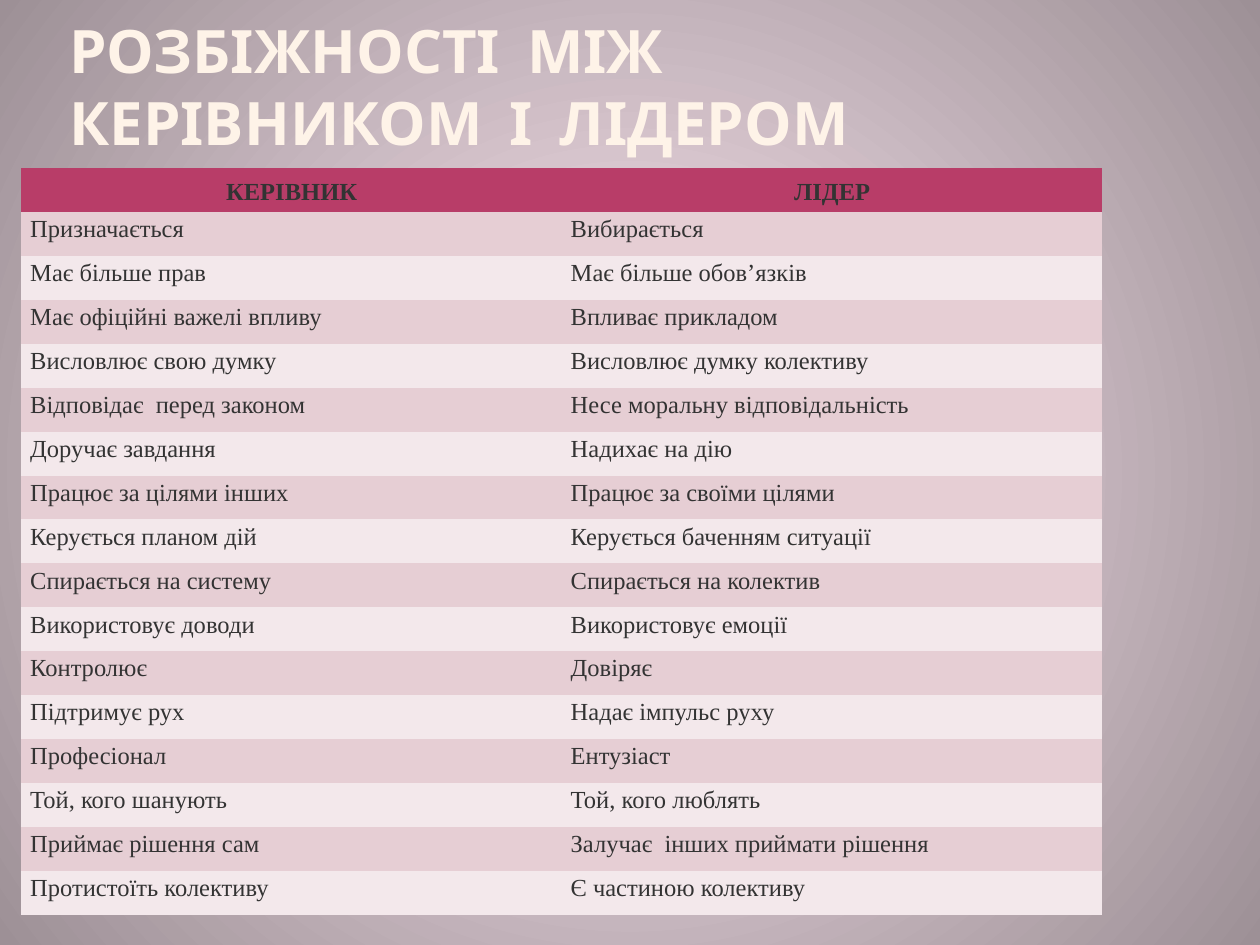
from typing import NamedTuple

from lxml.etree import SubElement
from pptx import Presentation
from pptx.dml.color import RGBColor
from pptx.enum.text import MSO_ANCHOR as Anchor, PP_ALIGN as Align
from pptx.oxml.ns import qn
from pptx.util import Inches, Pt

WIDTH, HEIGHT = Inches(10), Inches(7.5)
COLORS = {
    "glow": "FCE7F1",
    "edge": "9D9096",
    "title": "FEF3E8",
    "text": "333333",
    "header": "B83D68",
    "odd": "E6CED4",
    "even": "F3E8EB",
}
PLAIN_TABLE_STYLE = "{2D5ABB26-0587-4C30-8999-92F81FD0307C}"


class Area(NamedTuple):
    left: float
    top: float
    width: float
    height: float

    def lengths(self) -> tuple[int, ...]:
        return tuple(round(share * side) for share, side in zip(self, (WIDTH, HEIGHT) * 2))


class Contrast(NamedTuple):
    manager: str
    leader: str


TITLE = "РОЗБІЖНОСТІ  МІЖ КЕРІВНИКОМ  І  ЛІДЕРОМ"
TITLE_AREA = Area(0.05, 0, 0.792, 1 / 6)
TABLE_AREA = Area(0.017, 0.178, 0.858, 0.79)
CONTRASTS = [
    Contrast("КЕРІВНИК", "ЛІДЕР"),
    Contrast("Призначається", "Вибирається"),
    Contrast("Має більше прав", "Має більше обов’язків"),
    Contrast("Має офіційні важелі впливу", "Впливає прикладом"),
    Contrast("Висловлює свою думку", "Висловлює думку колективу"),
    Contrast("Відповідає  перед законом", "Несе моральну відповідальність"),
    Contrast("Доручає завдання", "Надихає на дію"),
    Contrast("Працює за цілями інших", "Працює за своїми цілями"),
    Contrast("Керується планом дій", "Керується баченням ситуації"),
    Contrast("Спирається на систему", "Спирається на колектив"),
    Contrast("Використовує доводи", "Використовує емоції"),
    Contrast("Контролює", "Довіряє"),
    Contrast("Підтримує рух", "Надає імпульс руху"),
    Contrast("Професіонал", "Ентузіаст"),
    Contrast("Той, кого шанують", "Той, кого люблять"),
    Contrast("Приймає рішення сам", "Залучає  інших приймати рішення"),
    Contrast("Протистоїть колективу", "Є частиною колективу"),
]


def rgb(name: str) -> RGBColor:
    return RGBColor.from_string(COLORS[name])


def write(frame, text: str, *, font: str, size: float, color: str, bold: bool = False,
          align: Align = Align.LEFT, spacing: float = 1.0) -> None:
    paragraph = frame.paragraphs[0]
    paragraph.alignment = align
    paragraph.line_spacing = spacing
    run = paragraph.add_run()
    run.text = text
    run.font.name = font
    run.font.size = Pt(size)
    run.font.bold = bold
    run.font.color.rgb = rgb(color)


def set_margins(holder, side: float) -> None:
    holder.margin_left = holder.margin_right = Inches(side)
    holder.margin_top = holder.margin_bottom = 0


def paint_background(slide) -> None:
    fill = slide.background.fill
    fill.gradient()
    for stop, name in zip(fill.gradient_stops, ("glow", "edge")):
        stop.color.rgb = rgb(name)
    gradient = slide.element.find(".//" + qn("a:gradFill"))
    gradient.remove(gradient.find(qn("a:lin")))
    circle = SubElement(gradient, qn("a:path"), path="circle")
    SubElement(circle, qn("a:fillToRect"), l="50000", t="50000", r="50000", b="50000")


def add_title(slide) -> None:
    frame = slide.shapes.add_textbox(*TITLE_AREA.lengths()).text_frame
    frame.word_wrap = True
    frame.vertical_anchor = Anchor.BOTTOM
    set_margins(frame, 0.05)
    write(frame, TITLE, font="Cabin", size=34.2, color="title", bold=True)


def add_contrasts(slide) -> None:
    table = slide.shapes.add_table(len(CONTRASTS), 2, *TABLE_AREA.lengths()).table
    table.horz_banding = False
    table.first_row = True
    slide.element.find(".//" + qn("a:tableStyleId")).text = PLAIN_TABLE_STYLE
    for row, contrast in enumerate(CONTRASTS):
        header = row == 0
        band = "header" if header else "odd" if row % 2 else "even"
        for column, text in enumerate(contrast):
            cell = table.cell(row, column)
            cell.fill.solid()
            cell.fill.fore_color.rgb = rgb(band)
            cell.vertical_anchor = Anchor.MIDDLE if header else Anchor.TOP
            set_margins(cell, 0.07)
            write(cell.text_frame, text, font="Times New Roman", size=14, color="text",
                  bold=header, align=Align.CENTER if header else Align.LEFT, spacing=1.15)


def main() -> None:
    deck = Presentation()
    deck.slide_width, deck.slide_height = WIDTH, HEIGHT
    slide = deck.slides.add_slide(deck.slide_layouts[6])
    paint_background(slide)
    add_title(slide)
    add_contrasts(slide)
    deck.save("out.pptx")


if __name__ == "__main__":
    main()
